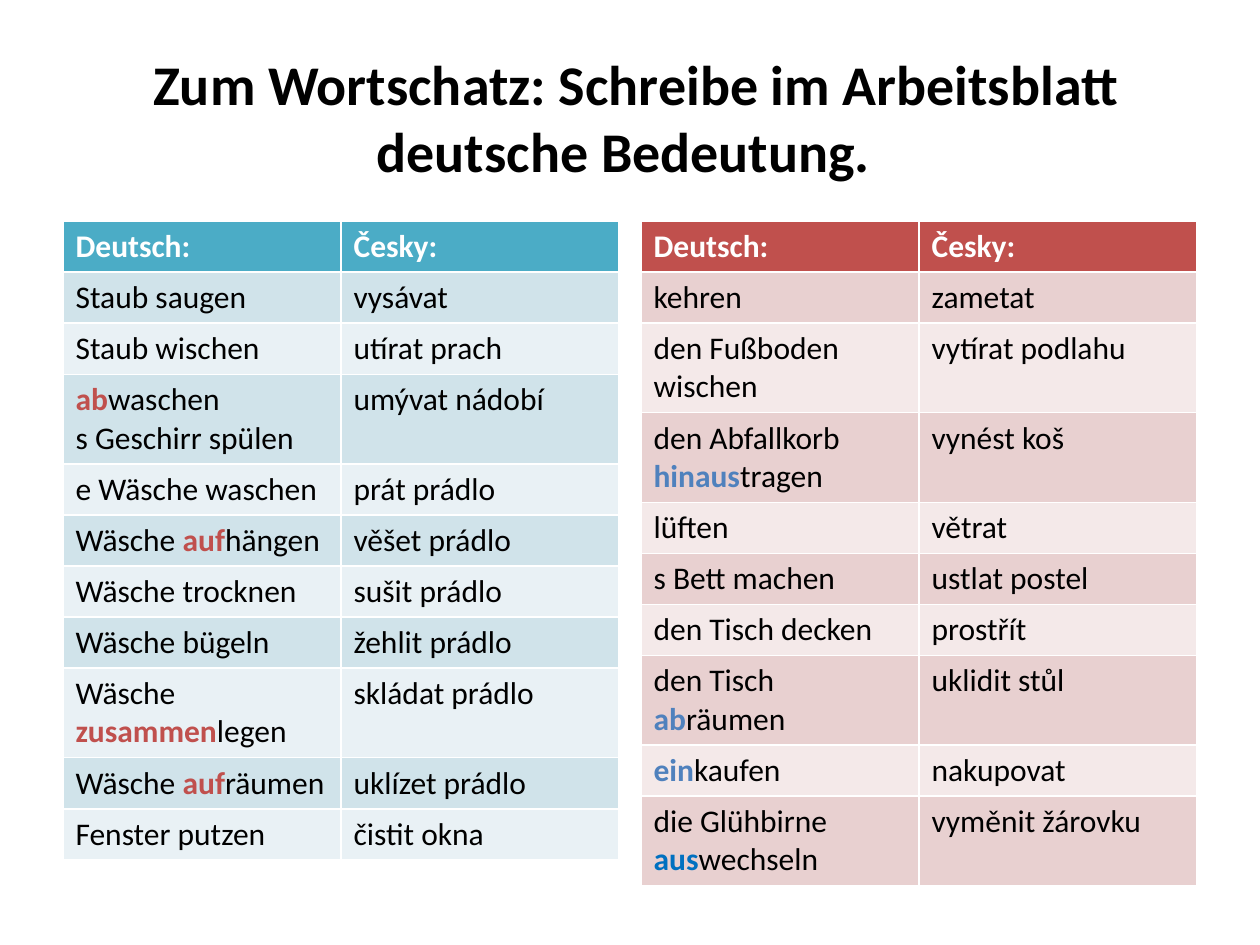
from dataclasses import dataclass

import pptx
import pptx.dml.color
import pptx.enum.text
import pptx.util

SLIDE_WIDTH, SLIDE_HEIGHT = 1260, 945
EMU_PER_PX = pptx.util.Inches(10) / SLIDE_WIDTH
FONT = "Calibri"
BLACK, WHITE = "000000", "FFFFFF"
MARGIN = 63
TABLE_TOP = 221
COLUMN_WIDTH = 278
ROW_HEIGHT = 51
TABLE_WIDTH = 2 * COLUMN_WIDTH


@dataclass(frozen=True)
class Entry:
    """A word pair; asterisks in the German text enclose the separable prefix."""
    german: str
    czech: str
    prefix_color: str = ""


@dataclass(frozen=True)
class Vocabulary:
    left: int
    header_fill: str
    band_fills: tuple[str, str]
    prefix_color: str
    entries: tuple[Entry, ...]


HEADINGS = Entry("Deutsch:", "Česky:")

VOCABULARIES = (
    Vocabulary(MARGIN, "4BACC6", ("D0E3EA", "E9F1F5"), "C0504D", (
        Entry("Staub saugen", "vysávat"),
        Entry("Staub wischen", "utírat prach"),
        Entry("*ab*waschen\ns Geschirr spülen", "umývat nádobí"),
        Entry("e Wäsche waschen", "prát prádlo"),
        Entry("Wäsche *auf*hängen", "věšet prádlo"),
        Entry("Wäsche trocknen", "sušit prádlo"),
        Entry("Wäsche bügeln", "žehlit prádlo"),
        Entry("Wäsche *zusammen*legen", "skládat prádlo"),
        Entry("Wäsche *auf*räumen", "uklízet prádlo"),
        Entry("Fenster putzen", "čistit okna"),
    )),
    Vocabulary(SLIDE_WIDTH - MARGIN - TABLE_WIDTH, "C0504D", ("E8D0D0", "F4E9E9"), "4F81BD", (
        Entry("kehren", "zametat"),
        Entry("den Fußboden wischen", "vytírat podlahu"),
        Entry("den Abfallkorb *hinaus*tragen", "vynést koš"),
        Entry("lüften", "větrat"),
        Entry("s Bett machen", "ustlat postel"),
        Entry("den Tisch decken", "prostřít"),
        Entry("den Tisch *ab*räumen", "uklidit stůl"),
        Entry("*ein*kaufen", "nakupovat"),
        Entry("die Glühbirne *aus*wechseln", "vyměnit žárovku", "0070C0"),
    )),
)


def px(length: int) -> pptx.util.Emu:
    return pptx.util.Emu(round(length * EMU_PER_PX))


def rgb(color: str) -> pptx.dml.color.RGBColor:
    return pptx.dml.color.RGBColor.from_string(color)


def style_font(font, size: int, color: str, bold: bool) -> None:
    font.name = FONT
    font.size = pptx.util.Pt(size)
    font.bold = bold
    font.color.rgb = rgb(color)


def write_marked_text(paragraph, text: str, prefix_color: str) -> None:
    """Write text, with the parts between asterisks bold and coloured."""
    for part_index, part in enumerate(text.split("*")):
        for line_index, line in enumerate(part.split("\n")):
            if line_index:
                paragraph.add_line_break()
            if not line:
                continue
            run = paragraph.add_run()
            run.text = line
            if part_index % 2:
                run.font.bold = True
                run.font.color.rgb = rgb(prefix_color)


def fill_row(row, entry: Entry, fill: str, text_color: str, bold: bool, prefix_color: str) -> None:
    for cell, text in zip(row.cells, (entry.german, entry.czech)):
        cell.fill.solid()
        cell.fill.fore_color.rgb = rgb(fill)
        paragraph = cell.text_frame.paragraphs[0]
        style_font(paragraph.font, 18, text_color, bold)
        write_marked_text(paragraph, text, prefix_color)


def add_vocabulary(slide, vocabulary: Vocabulary) -> None:
    row_count = len(vocabulary.entries) + 1
    table = slide.shapes.add_table(
        row_count, 2, px(vocabulary.left), px(TABLE_TOP),
        px(TABLE_WIDTH), px(row_count * ROW_HEIGHT)).table
    for row in table.rows:
        row.height = px(ROW_HEIGHT)
    fill_row(table.rows[0], HEADINGS, vocabulary.header_fill, WHITE, True, vocabulary.prefix_color)
    for index, entry in enumerate(vocabulary.entries):
        fill_row(table.rows[index + 1], entry, vocabulary.band_fills[index % 2], BLACK, False,
                 entry.prefix_color or vocabulary.prefix_color)


def add_title(slide) -> None:
    title = slide.shapes.title
    title.left, title.top = px(MARGIN), px(38)
    title.width, title.height = px(SLIDE_WIDTH - 2 * MARGIN), px(158)
    title.text_frame.vertical_anchor = pptx.enum.text.MSO_ANCHOR.MIDDLE
    heading = title.text_frame.paragraphs[0]
    heading.text = " Zum Wortschatz: Schreibe im Arbeitsblatt deutsche Bedeutung. "
    heading.alignment = pptx.enum.text.PP_ALIGN.CENTER
    style_font(heading.font, 32, BLACK, True)


def main() -> None:
    presentation = pptx.Presentation()
    presentation.slide_width, presentation.slide_height = px(SLIDE_WIDTH), px(SLIDE_HEIGHT)
    slide = presentation.slides.add_slide(presentation.slide_layouts.get_by_name("Title Only"))
    add_title(slide)
    for vocabulary in VOCABULARIES:
        add_vocabulary(slide, vocabulary)
    presentation.save("out.pptx")


if __name__ == "__main__":
    main()
